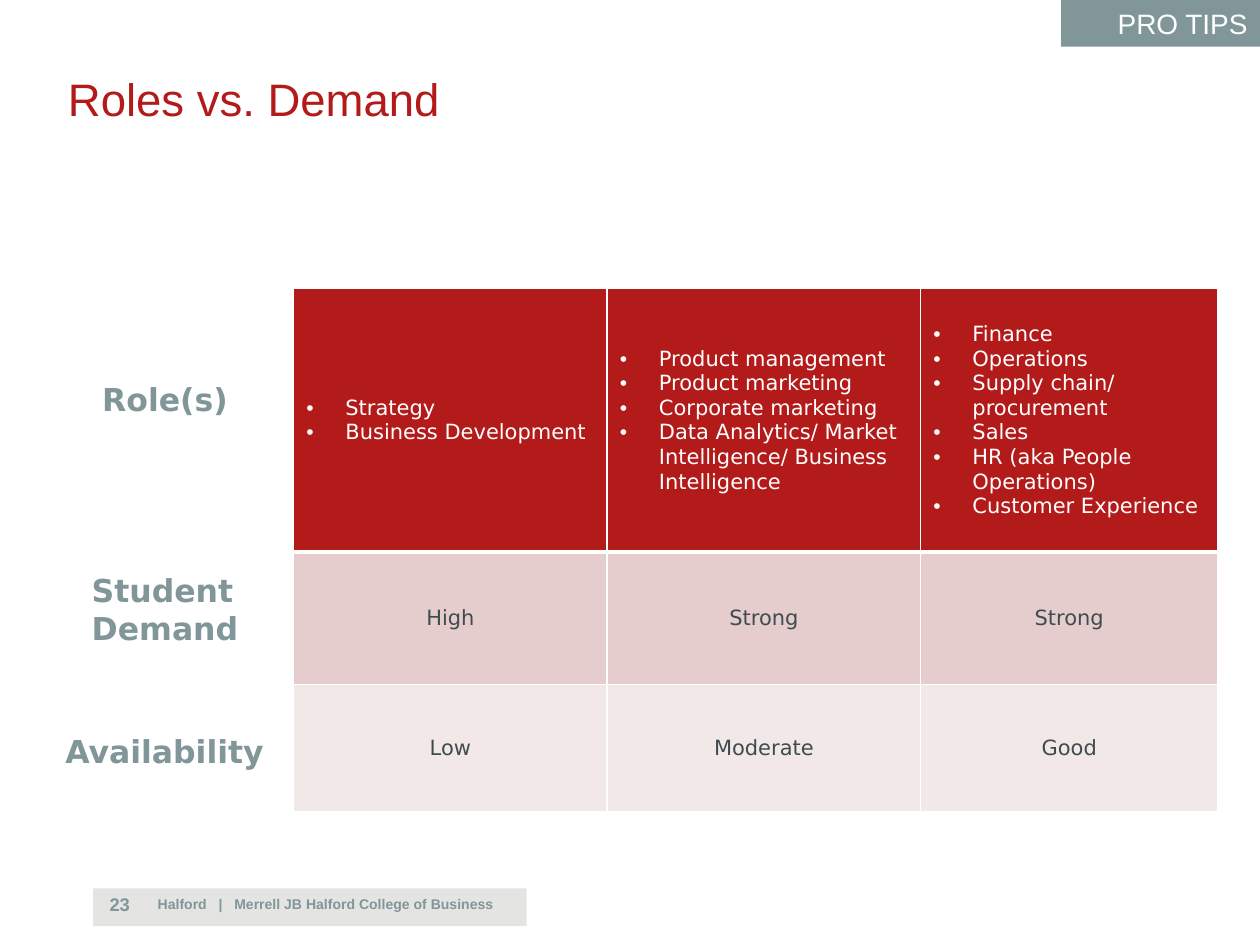
from lxml.etree import SubElement
from pptx import Presentation
from pptx.dml.color import RGBColor
from pptx.enum.shapes import MSO_SHAPE
from pptx.enum.text import MSO_ANCHOR, PP_ALIGN
from pptx.oxml.ns import qn
from pptx.util import Cm, Pt

RED, GRAY, DARK, WHITE = "B31B1B", "809699", "3F4C4E", "FFFFFF"


def rgb(value):
    return RGBColor.from_string(value)


def add_run(p, text, size, font, color, bold=False):
    r = p.add_run()
    r.text = text
    r.font.size = Pt(size)
    r.font.name = font
    r.font.bold = bold
    r.font.color.rgb = rgb(color)
    return r


prs = Presentation()
prs.slide_width, prs.slide_height = Cm(25.4), Cm(19.05)
s = prs.slides.add_slide(prs.slide_layouts[6])

bars = []
for x, y, w, h, color in [(1.88, 17.91, 8.74, 0.76, "E4E4E3"),
                          (21.39, 0, 4.01, 0.94, GRAY)]:
    sp = s.shapes.add_shape(MSO_SHAPE.RECTANGLE, Cm(x), Cm(y), Cm(w), Cm(h))
    sp.shadow.inherit = False
    sp.fill.solid()
    sp.fill.fore_color.rgb = rgb(color)
    sp.line.fill.background()
    bars.append(sp)

tf = bars[1].text_frame
tf.vertical_anchor = MSO_ANCHOR.MIDDLE
p = tf.paragraphs[0]
p.alignment = PP_ALIGN.RIGHT
add_run(p, "PRO TIPS", 16, "Arial", WHITE)

gap = (" ", 660)
footer = ["Halford", " ", "|", " ", "Merrell JB Halford College of Business"]
texts = [
    (1.12, 1.3, 21.31, 2.54, 0.25, MSO_ANCHOR.TOP, ["Roles vs. Demand"], 26, "Arial", RED, False),
    (2.21, 17.86, 0.97, 0.71, 0, MSO_ANCHOR.BOTTOM, ["23"], 10.5, "Arial", GRAY, True),
    (3.18, 17.91, 17.78, 0.61, 0, MSO_ANCHOR.BOTTOM, footer, 8, "Arial", GRAY, True),
    (0.71, 7.54, 5.23, 1.02, 1.35, MSO_ANCHOR.MIDDLE, ["Role(s)"], 18, "DejaVu Sans", GRAY, True),
    (0.94, 11.38, 4.75, 1.8, 0.91, MSO_ANCHOR.MIDDLE, ["Student Demand"], 18, "DejaVu Sans", GRAY, True),
    (0.71, 14.63, 5.23, 1.02, 0.61, MSO_ANCHOR.MIDDLE, ["Availability"], 18, "DejaVu Sans", GRAY, True),
]
for x, y, w, h, inset, anchor, runs, size, font, color, bold in texts:
    tf = s.shapes.add_textbox(Cm(x), Cm(y), Cm(w), Cm(h)).text_frame
    tf.word_wrap = True
    tf.vertical_anchor = anchor
    tf.margin_left = Cm(inset)
    tf.margin_right = Cm(min(inset, 0.25))
    for text in runs:
        r = add_run(tf.paragraphs[0], text, size, font, color, bold)
        if text == " ":
            r.font._element.set("spc", "445")

rows = [
    (5.31, RED, WHITE, [
        ["Strategy", "Business Development"],
        ["Product management", "Product marketing", "Corporate marketing",
         "Data Analytics/ Market Intelligence/ Business Intelligence"],
        ["Finance", "Operations", "Supply chain/ procurement", "Sales",
         "HR (aka People Operations)", "Customer Experience"]]),
    (2.67, "E5CDCD", DARK, [["High"], ["Strong"], ["Strong"]]),
    (2.57, "F2E8E8", DARK, [["Low"], ["Moderate"], ["Good"]]),
]
widths = [6.32, 6.32, 5.99]
table = s.shapes.add_table(3, 3, Cm(5.92), Cm(5.82), Cm(sum(widths)), Cm(10.55)).table
table.horz_banding = False
for column, width in zip(table.columns, widths):
    column.width = Cm(width)

for i, (height, fill, color, cells) in enumerate(rows):
    table.rows[i].height = Cm(height)
    for j, lines in enumerate(cells):
        cell = table.cell(i, j)
        cell.vertical_anchor = MSO_ANCHOR.MIDDLE
        tcPr = cell._tc.get_or_add_tcPr()
        for side in "LRTB":
            thick = (i, side) in [(0, "B"), (1, "T")]
            ln = SubElement(tcPr, qn(f"a:ln{side}"), w=str(Pt(3 if thick else 1)))
            SubElement(SubElement(ln, qn("a:solidFill")), qn("a:srgbClr"), val=WHITE)
        cell.fill.solid()
        cell.fill.fore_color.rgb = rgb(fill)
        tf = cell.text_frame
        for k, text in enumerate(lines):
            p = tf.add_paragraph() if k else tf.paragraphs[0]
            add_run(p, text, 12, "DejaVu Sans", color)
            if i:
                p.alignment = PP_ALIGN.CENTER
            else:
                pPr = p._p.get_or_add_pPr()
                pPr.set("marL", str(Cm(0.79)))
                pPr.set("indent", str(-Cm(0.79)))
                SubElement(pPr, qn("a:buFont"), typeface="Arial")
                SubElement(pPr, qn("a:buChar"), char="•")

prs.save("out.pptx")
